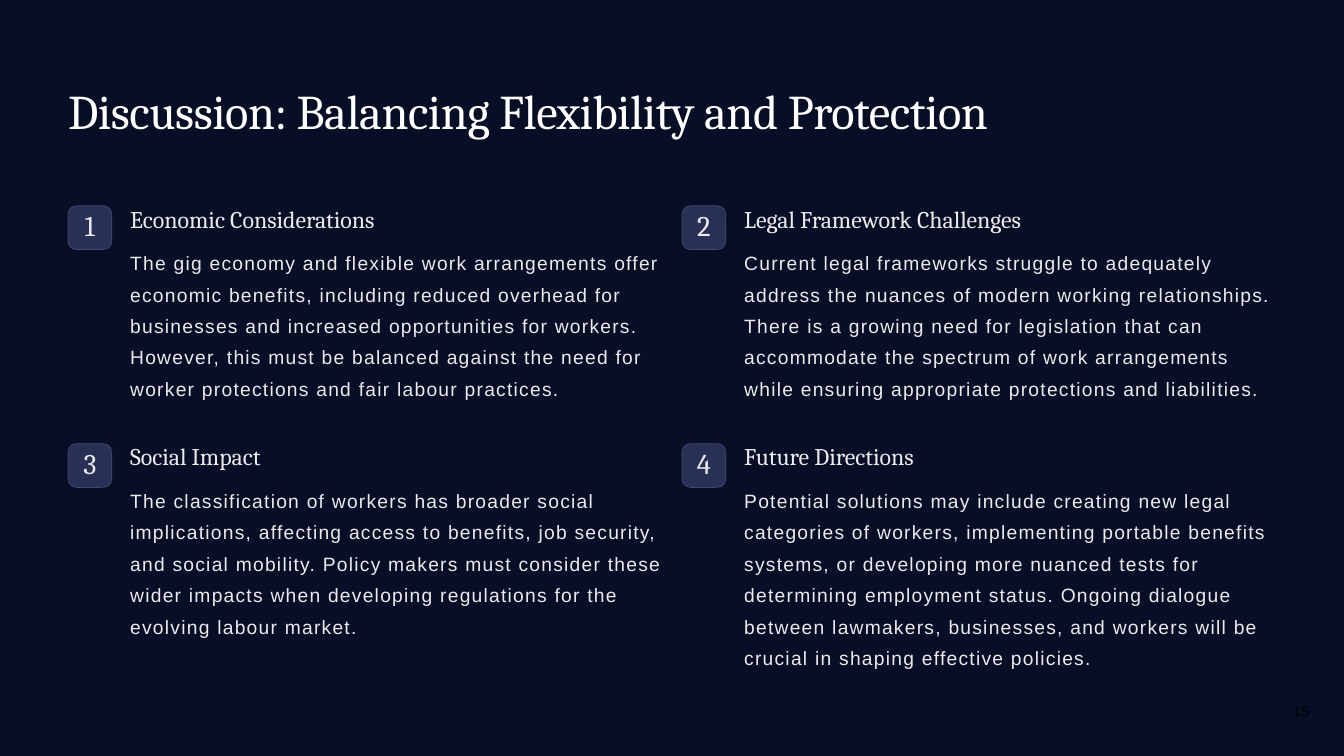
import pptx
import pptx.util
import pptx.dml.color
import pptx.enum.shapes
import pptx.enum.text

Pt = pptx.util.Pt
RGB = pptx.dml.color.RGBColor
ALIGN = pptx.enum.text.PP_ALIGN

NAVY = RGB(0x07, 0x0E, 0x25)
BADGE = RGB(0x28, 0x30, 0x56)
EDGE = RGB(0x41, 0x49, 0x6F)
WHITE = RGB(0xFF, 0xFF, 0xFF)
PALE = RGB(0xEB, 0xEB, 0xEE)
BLACK = RGB(0, 0, 0)

# Text styles: font, letter spacing in hundredths of a point, paragraph format
TITLE = ({"name": "Cambria", "size": Pt(41.5)}, WHITE, -40, {"space_before": Pt(1)})
DIGIT = ({"name": "Cambria", "size": Pt(24.5)}, PALE, -50,
         {"space_before": Pt(0.9), "alignment": ALIGN.CENTER})
HEAD = ({"name": "Cambria", "size": Pt(20.5)}, PALE, -5, {"space_before": Pt(1)})
BODY = ({"name": "Arial", "size": Pt(16.5)}, PALE, 110,
        {"space_before": Pt(8.8), "line_spacing": 1.36})
PAGE = ({"name": "Arial", "size": Pt(12)}, BLACK, 0, {"alignment": ALIGN.RIGHT})

TOPICS = [
    ("Economic Considerations",
     "The gig economy and flexible work arrangements offer economic benefits, "
     "including reduced overhead for businesses and increased opportunities for "
     "workers. However, this must be balanced against the need for worker "
     "protections and fair labour practices."),
    ("Legal Framework Challenges",
     "Current legal frameworks struggle to adequately address the nuances of "
     "modern working relationships. There is a growing need for legislation that "
     "can accommodate the spectrum of work arrangements while ensuring "
     "appropriate protections and liabilities."),
    ("Social Impact",
     "The classification of workers has broader social implications, affecting "
     "access to benefits, job security, and social mobility. Policy makers must "
     "consider these wider impacts when developing regulations for the evolving "
     "labour market."),
    ("Future Directions",
     "Potential solutions may include creating new legal categories of workers, "
     "implementing portable benefits systems, or developing more nuanced tests "
     "for determining employment status. Ongoing dialogue between lawmakers, "
     "businesses, and workers will be crucial in shaping effective policies."),
]


def write(shape, *parts):
    """Fill a shape with one styled paragraph per (text, style) pair."""
    frame = shape.text_frame
    edges = {"margin_left": 0, "margin_right": 0, "margin_top": 0, "margin_bottom": 0,
             "word_wrap": True, "vertical_anchor": pptx.enum.text.MSO_ANCHOR.TOP}
    for key, val in edges.items():
        setattr(frame, key, val)
    for num, (text, (font, color, gap, form)) in enumerate(parts):
        para = frame.add_paragraph() if num else frame.paragraphs[0]
        for key, val in form.items():
            setattr(para, key, val)
        run = para.add_run()
        run.text = text
        for key, val in font.items():
            setattr(run.font, key, val)
        run.font.color.rgb = color
        run._r.get_or_add_rPr().set("spc", str(gap))


deck = pptx.Presentation()
deck.slide_width, deck.slide_height = Pt(1152), Pt(648)
slide = deck.slides.add_slide(deck.slide_layouts[6])
shapes = slide.shapes

# Background
slide.background.fill.solid()
slide.background.fill.fore_color.rgb = NAVY

# Title
title = shapes.add_textbox(Pt(58.3), Pt(69.8), Pt(1040), Pt(70))
write(title, ("Discussion: Balancing Flexibility and Protection", TITLE))

# Topics in a grid of two by two
for num, (head, body) in enumerate(TOPICS):
    row, col = divmod(num, 2)
    left, top = 58.3 + 526.3 * col, 176.4 + 203.9 * row
    badge = shapes.add_shape(pptx.enum.shapes.MSO_SHAPE.ROUNDED_RECTANGLE,
                             Pt(left), Pt(top), Pt(37.5), Pt(37.5))
    badge.adjustments[0] = 0.19
    badge.shadow.inherit = False
    badge.fill.solid()
    badge.fill.fore_color.rgb = BADGE
    badge.line.color.rgb = EDGE
    badge.line.width = Pt(0.6)
    write(badge, (str(num + 1), DIGIT))
    block = shapes.add_textbox(Pt(left + 53.3), Pt(top - 1.4), Pt(456), Pt(190))
    write(block, (head, HEAD), (body, BODY))

# Page number
page = shapes.add_textbox(Pt(1062), Pt(602), Pt(60), Pt(16))
write(page, ("15", PAGE))

deck.save("out.pptx")
